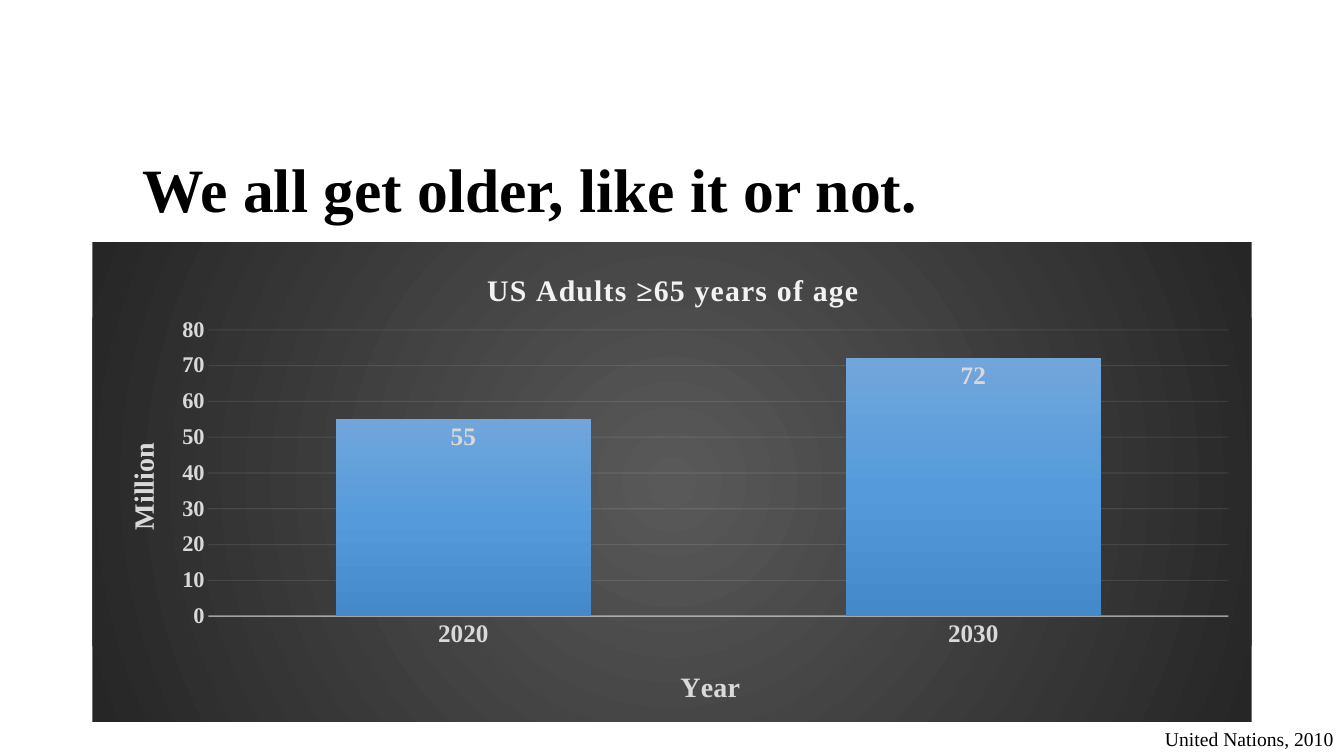
from lxml.etree import SubElement
from pptx import Presentation
from pptx.chart.data import CategoryChartData
from pptx.dml.color import RGBColor
from pptx.enum.chart import XL_CHART_TYPE as ChartType, XL_LABEL_POSITION as LabelPosition
from pptx.enum.chart import XL_TICK_MARK as TickMark
from pptx.enum.text import MSO_ANCHOR as Anchor, MSO_AUTO_SIZE as AutoSize, PP_ALIGN as Align
from pptx.oxml import parse_xml
from pptx.oxml.ns import nsdecls, qn
from pptx.util import Cm, Pt

HEADING = "We all get older, like it or not."
SOURCE = "United Nations, 2010"
CHART_TITLE = "US Adults ≥65 years of age"
YEARS = ["2020", "2030"]
MILLIONS = [55, 72]
FACE = "Times New Roman"
COLORS = {"ink": "000000", "pale": "F2F2F2", "label": "D9D9D9"}
BAR_STOPS = [(0, "71A6DB"), (50, "559BDB"), (100, "448ACA")]
PANEL_STOPS = [(0, "595959"), (100, "262626")]
BAR_SHADE = '<a:lin ang="5400000" scaled="0"/>'
PANEL_SHADE = '<a:path path="circle"><a:fillToRect l="50000" t="50000" r="50000" b="50000"/></a:path>'


def style(font, size, color, bold=True):
    font.name, font.size, font.bold = FACE, Pt(size), bold
    font.color.rgb = RGBColor.from_string(COLORS[color])


def gradient(stops, shade):
    marks = "".join(
        f'<a:gs pos="{place * 1000}"><a:srgbClr val="{color}"/></a:gs>' for place, color in stops
    )
    return f'<a:gradFill {nsdecls("a")} rotWithShape="1"><a:gsLst>{marks}</a:gsLst>{shade}</a:gradFill>'


def manual_layout(x, y, size=None):
    rows = [("xMode", "edge"), ("yMode", "edge"), ("x", x), ("y", y)]
    if size:
        rows = [("layoutTarget", "inner")] + rows + list(zip("wh", size))
    body = "".join(f'<c:{tag} val="{value}"/>' for tag, value in rows)
    return parse_xml(f'<c:layout {nsdecls("c")}><c:manualLayout>{body}</c:manualLayout></c:layout>')


def drop_layout(element):
    for layout in element.findall(qn("c:layout")):
        element.remove(layout)


def write_title(title, text, size, color, x, y):
    para = title.text_frame.paragraphs[0]
    para.text = text
    style(para.font, size, color)
    drop_layout(title.element)
    title.element.find(qn("c:tx")).addnext(manual_layout(x, y))
    return para


def draw_line(line, width, opacity):
    line.width = Pt(width)
    line.color.rgb = RGBColor.from_string(COLORS["pale"])
    color = next(line.fill._xPr.iter(qn("a:srgbClr")))
    SubElement(color, qn("a:alpha")).set("val", str(opacity * 1000))


deck = Presentation()
deck.slide_width, deck.slide_height = Cm(33.87), Cm(19.05)
page = deck.slides.add_slide(deck.slide_layouts[5])

heading = page.shapes.title
heading.left, heading.top, heading.width, heading.height = Cm(3.33), Cm(3), Cm(29.21), Cm(3.68)
frame = heading.text_frame
frame.text = HEADING
frame.word_wrap = True
frame.auto_size = AutoSize.NONE
frame.vertical_anchor = Anchor.MIDDLE
para = frame.paragraphs[0]
para.alignment = Align.LEFT
para.line_spacing = 0.9
style(para.font, 44, "ink")

data = CategoryChartData()
data.categories = YEARS
data.add_series(CHART_TITLE, MILLIONS)
chart = page.shapes.add_chart(
    ChartType.COLUMN_CLUSTERED, Cm(2.33), Cm(6.1), Cm(29.21), Cm(12.09), data
).chart
chart.has_legend = False
style(chart.font, 18, "label")
chart.element.find(qn("c:chart")).addnext(parse_xml(
    f'<c:spPr {nsdecls("c", "a")}>{gradient(PANEL_STOPS, PANEL_SHADE)}<a:ln><a:noFill/></a:ln></c:spPr>'
))
area = next(chart.element.iter(qn("c:plotArea")))
drop_layout(area)
area.insert(0, manual_layout(0.1, 0.183, (0.88, 0.597)))

chart.has_title = True
para = write_title(chart.chart_title, CHART_TITLE, 21.3, "pale", 0.336, 0.05)
para.runs[0].font._element.set("spc", "100")

years, millions = chart.category_axis, chart.value_axis
write_title(years.axis_title, "Year", 20, "label", 0.503, 0.88)
write_title(millions.axis_title, "Million", 20, "label", 0.024, 0.407)
turn = next(millions.axis_title.element.iter(qn("a:bodyPr")))
turn.set("rot", "-5400000")
turn.set("vert", "horz")
for axis, size in ((years, 18), (millions, 16)):
    axis.major_tick_mark = axis.minor_tick_mark = TickMark.NONE
    style(axis.tick_labels.font, size, "label")
draw_line(years.format.line, 1, 54)
millions.minimum_scale, millions.maximum_scale, millions.major_unit = 0, 80, 10
millions.format.line.fill.background()
draw_line(millions.major_gridlines.format.line, 0.75, 10)

plot = chart.plots[0]
plot.gap_width, plot.overlap = 100, -24
plot.vary_by_categories = False
bars = plot.series[0]
bars.format.fill.solid()
solid = next(bars._element.iter(qn("a:solidFill")))
solid.getparent().replace(solid, parse_xml(gradient(BAR_STOPS, BAR_SHADE)))
labels = bars.data_labels
labels.show_value = True
labels.position = LabelPosition.INSIDE_END
style(labels.font, 18, "label")

box = page.shapes.add_textbox(Cm(27.79), Cm(18.19), Cm(6.07), Cm(0.86))
frame = box.text_frame
frame.word_wrap = True
frame.auto_size = AutoSize.SHAPE_TO_FIT_TEXT
para = frame.paragraphs[0]
para.text = SOURCE
para.alignment = Align.RIGHT
style(para.font, 14, "ink", False)

deck.save("out.pptx")
